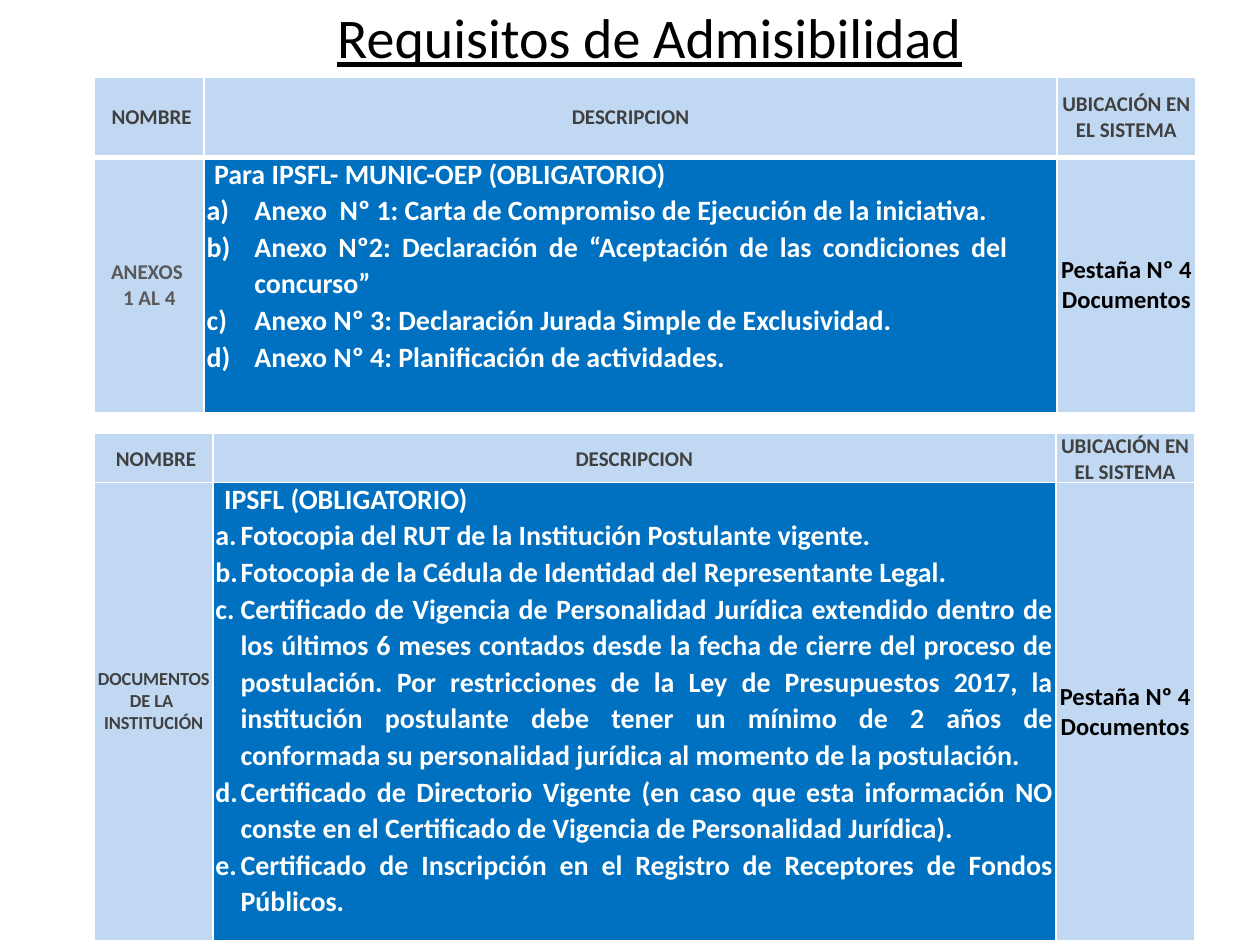
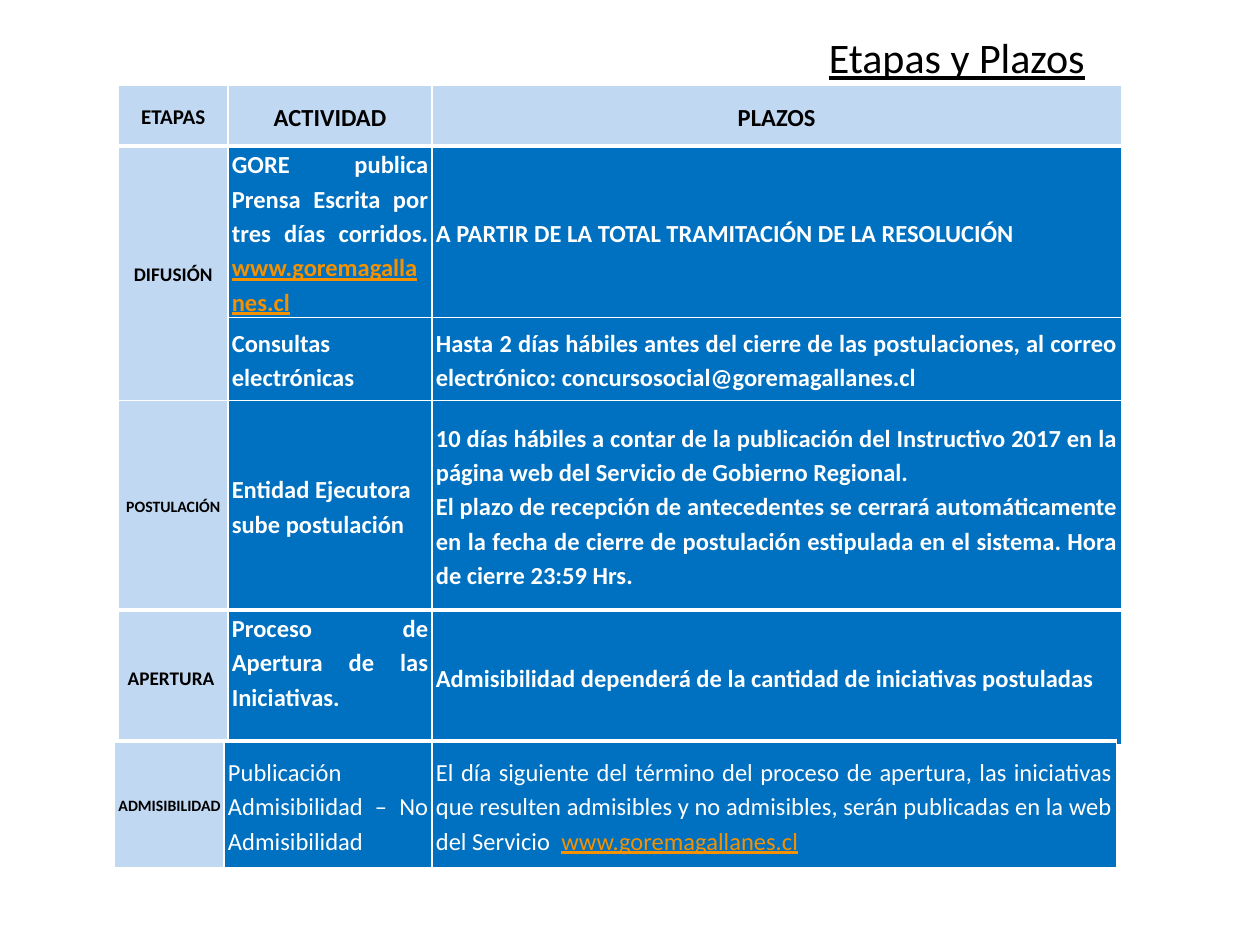
import dataclasses
import typing

import pptx
import pptx.dml.color
import pptx.enum.text
import pptx.oxml.ns
import pptx.oxml.xmlchemy
import pptx.util
from lxml import etree

# Shared scale, colours and font: 100 px to the inch
EMU_PER_PX = 9144
FONT = "Calibri"
BLACK, WHITE = "000000", "FFFFFF"
PALE, BLUE = "C1D8F2", "0070C0"
DARK_GREY, GREY, ORANGE = "404040", "595959", "F49100"

ALIGN = pptx.enum.text.PP_ALIGN
ANCHOR = pptx.enum.text.MSO_ANCHOR


@dataclasses.dataclass(frozen=True)
class Span:
    text: str
    color: str
    underline: bool = False


@dataclasses.dataclass(frozen=True)
class Para:
    spans: tuple[Span, ...]
    indent: int = 0
    hanging: bool = False
    numbering: str = ""
    right: int = 0
    spacing: float = 1.0


@dataclasses.dataclass(frozen=True)
class Cell:
    paras: tuple[Para, ...]
    size: float
    fill: str = BLUE
    align: typing.Any = ALIGN.JUSTIFY
    anchor: typing.Any = ANCHOR.MIDDLE
    bold: bool = True
    bottom: int = 0


@dataclasses.dataclass(frozen=True)
class Grid:
    left: int
    top: int
    columns: tuple[int, ...]
    heights: tuple[int, ...]
    rows: tuple[tuple[Cell, ...], ...]
    thick: frozenset[int]  # horizontal rules, counted from the top, drawn at 3 pt
    margin: int = 2


def px(length: int) -> pptx.util.Emu:
    return pptx.util.Emu(length * EMU_PER_PX)


def rgb(color: str) -> pptx.dml.color.RGBColor:
    return pptx.dml.color.RGBColor.from_string(color)


def add_span(para: typing.Any, text: str, *, size: float, color: str = BLACK,
             bold: bool = False, underline: bool = False) -> None:
    span = para.add_run()
    span.text = text
    font = span.font
    font.name, font.size = FONT, pptx.util.Pt(size)
    font.bold, font.underline = bold, underline
    font.color.rgb = rgb(color)


def add_page(deck: typing.Any, title: str, box: tuple[int, int, int, int],
             size: float, align: typing.Any) -> typing.Any:
    page = deck.slides.add_slide(deck.slide_layouts[5])
    holder = page.shapes.title
    holder.left, holder.top, holder.width, holder.height = map(px, box)
    frame = holder.text_frame
    frame.word_wrap = True
    frame.auto_size = pptx.enum.text.MSO_AUTO_SIZE.NONE
    frame.vertical_anchor = ANCHOR.MIDDLE
    para = frame.paragraphs[0]
    para.alignment = align
    add_span(para, title, size=size, underline=True)
    return page


def format_para(para: typing.Any, model: Para) -> None:
    para.line_spacing = model.spacing
    properties = para._p.get_or_add_pPr()
    properties.set("marL", str(px(model.indent)))
    properties.set("marR", str(px(model.right)))
    properties.set("indent", str(px(-model.indent if model.hanging else 0)))
    if model.numbering:
        bullet = etree.SubElement(properties, pptx.oxml.ns.qn("a:buAutoNum"))
        bullet.set("type", model.numbering)


def draw_borders(cell: typing.Any, top: float, bottom: float) -> None:
    properties = cell._tc.get_or_add_tcPr()
    widths = {"a:lnL": 1, "a:lnR": 1, "a:lnT": top, "a:lnB": bottom}
    for position, (tag, width) in enumerate(widths.items()):
        line = etree.Element(pptx.oxml.ns.qn(tag), w=str(pptx.util.Pt(width)))
        fill = etree.SubElement(line, pptx.oxml.ns.qn("a:solidFill"))
        etree.SubElement(fill, pptx.oxml.ns.qn("a:srgbClr"), val=WHITE)
        properties.insert(position, line)


def fill_cell(cell: typing.Any, model: Cell, margin: int) -> None:
    cell.margin_left = cell.margin_right = px(margin)
    cell.margin_top, cell.margin_bottom = px(0), px(model.bottom)
    cell.vertical_anchor = model.anchor
    cell.fill.solid()
    cell.fill.fore_color.rgb = rgb(model.fill)
    frame = cell.text_frame
    for index, para_model in enumerate(model.paras):
        para = frame.add_paragraph() if index else frame.paragraphs[0]
        para.alignment = model.align
        format_para(para, para_model)
        for span in para_model.spans:
            add_span(para, span.text, size=model.size, color=span.color,
                     bold=model.bold, underline=span.underline)


def add_grid(page: typing.Any, grid: Grid) -> typing.Any:
    frame = page.shapes.add_table(
        len(grid.heights), len(grid.columns), px(grid.left), px(grid.top),
        px(sum(grid.columns)), px(sum(grid.heights)))
    table = frame.table
    table.first_row = table.horz_banding = False
    for column, width in zip(table.columns, grid.columns):
        column.width = px(width)
    for row, height in zip(table.rows, grid.heights):
        row.height = px(height)
    for r, models in enumerate(grid.rows):
        top, bottom = (3 if rule in grid.thick else 1 for rule in (r, r + 1))
        for c, model in enumerate(models):
            fill_cell(table.cell(r, c), model, grid.margin)
            draw_borders(table.cell(r, c), top, bottom)
    return table


# Cell builders
def label(*lines: str, size: float, color: str = BLACK, spacing: float = 1.0,
          bottom: int = 0) -> Cell:
    paras = tuple(Para((Span(line, color),), spacing=spacing) for line in lines)
    return Cell(paras, size, PALE, ALIGN.CENTER, bottom=bottom)


def requirements(heading: str, items: tuple[str, ...], numbering: str,
                 start: int, indent: int, right: int = 0) -> Cell:
    listed = tuple(Para((Span(item, WHITE),), indent, True, numbering, right, 1.07)
                   for item in items)
    return Cell((Para((Span(heading, WHITE),), start),) + listed, 16,
                anchor=ANCHOR.TOP)


def detail(*lines: str, link: str = "", bold: bool = True,
           anchor: typing.Any = ANCHOR.MIDDLE) -> Cell:
    paras = [Para((Span(line, WHITE),), spacing=1.15) for line in lines]
    if link:
        spans = paras[-1].spans + (Span(link, ORANGE, True),)
        paras[-1] = dataclasses.replace(paras[-1], spans=spans)
    return Cell(tuple(paras), 14, anchor=anchor, bold=bold)


def stage(name: str, size: float) -> Cell:
    return label(name, size=size, spacing=1.15)


def build_requirements(deck: typing.Any) -> None:
    page = add_page(deck, "Requisitos de Admisibilidad", (248, -3, 535, 64),
                    32, ALIGN.CENTER)
    header = tuple(label(name, size=12, color=DARK_GREY) for name in
                   (" NOMBRE", "DESCRIPCION", "UBICACIÓN EN EL SISTEMA"))
    location = label("Pestaña Nº 4 Documentos", size=14)

    # Annexes
    annexes = requirements("Para IPSFL- MUNIC-OEP (OBLIGATORIO)", (
        "Anexo  Nº 1: Carta de Compromiso de Ejecución de la iniciativa.",
        "Anexo Nº2: Declaración de “Aceptación de las condiciones del concurso”",
        "Anexo Nº 3: Declaración Jurada Simple de Exclusividad.",
        "Anexo Nº 4: Planificación de actividades.",
    ), "alphaLcParenR", start=6, indent=38, right=37)
    annex_name = label("ANEXOS ", "1 AL 4", size=12, color=GREY)
    add_grid(page, Grid(75, 61, (87, 677, 110), (64, 203),
                        (header, (annex_name, annexes, location)), frozenset({1})))

    # Institution documents: heading and body are separate tables
    documents = requirements("IPSFL (OBLIGATORIO)", (
        "Fotocopia del RUT de la Institución Postulante vigente.",
        "Fotocopia de la Cédula de Identidad del Representante Legal.",
        "Certificado de Vigencia de Personalidad Jurídica extendido dentro de los "
        "últimos 6 meses contados desde la fecha de cierre del proceso de "
        "postulación. Por restricciones de la Ley de Presupuestos 2017, la "
        "institución postulante debe tener un mínimo de 2 años de conformada su "
        "personalidad jurídica al momento de la postulación.",
        "Certificado de Directorio Vigente (en caso que esta información NO conste "
        "en el Certificado de Vigencia de Personalidad Jurídica).",
        "Certificado de Inscripción en el Registro de Receptores de Fondos Públicos.",
    ), "alphaLcPeriod", start=7, indent=20)
    document_name = label("DOCUMENTOS DE LA ", "INSTITUCIÓN", size=10.5,
                          color=DARK_GREY, bottom=17)
    columns = (94, 669, 110)
    add_grid(page, Grid(75, 344, columns, (39,), (header,), frozenset()))
    add_grid(page, Grid(75, 383, columns, (364,),
                        ((document_name, documents, location),), frozenset()))


def build_stages(deck: typing.Any) -> None:
    page = add_page(deck, "Etapas y Plazos", (91, 22, 780, 46), 24, ALIGN.RIGHT)
    website = "www.goremagallanes.cl"

    # Stages up to the opening of applications
    spread = stage("DIFUSIÓN", 11)
    rows = (
        (stage("ETAPAS", 12), stage("ACTIVIDAD", 14), stage("PLAZOS", 14)),
        (spread,
         detail("GORE publica Prensa Escrita por tres días corridos. ", link=website),
         detail("A PARTIR DE LA TOTAL TRAMITACIÓN DE LA RESOLUCIÓN")),
        (dataclasses.replace(spread, paras=()),
         detail("Consultas electrónicas "),
         detail("Hasta 2 días hábiles antes del cierre de las postulaciones, al correo "
                "electrónico: concursosocial@goremagallanes.cl")),
        (stage("POSTULACIÓN", 9),
         detail("Entidad Ejecutora ", "sube postulación"),
         detail("10 días hábiles a contar de la publicación del Instructivo 2017 en la "
                "página web del Servicio de Gobierno Regional.",
                "El plazo de recepción de antecedentes se cerrará automáticamente en "
                "la fecha de cierre de postulación estipulada en el sistema. Hora de "
                "cierre 23:59 Hrs.")),
        (stage("APERTURA ", 11),
         detail("Proceso de Apertura de las Iniciativas. ", anchor=ANCHOR.TOP),
         detail("Admisibilidad dependerá de la cantidad de iniciativas postuladas")),
    )
    table = add_grid(page, Grid(94, 68, (87, 162, 547), (48, 133, 66, 166, 107),
                                rows, frozenset({1, 4}), margin=3))
    table.cell(1, 0).merge(table.cell(2, 0))

    # Admissibility
    result = (
        stage("ADMISIBILIDAD", 9),
        detail("Publicación Admisibilidad – No Admisibilidad", bold=False),
        detail("El día siguiente del término del proceso de apertura, las iniciativas "
               "que resulten admisibles y no admisibles, serán publicadas en la web "
               "del Servicio  ", link=website, bold=False),
    )
    add_grid(page, Grid(91, 588, (87, 165, 543), (102,), (result,),
                        frozenset({0, 1}), margin=3))


def main() -> None:
    deck = pptx.Presentation()
    deck.slide_width, deck.slide_height = px(1000), px(750)
    build_requirements(deck)
    build_stages(deck)
    deck.save("out.pptx")


if __name__ == "__main__":
    main()
